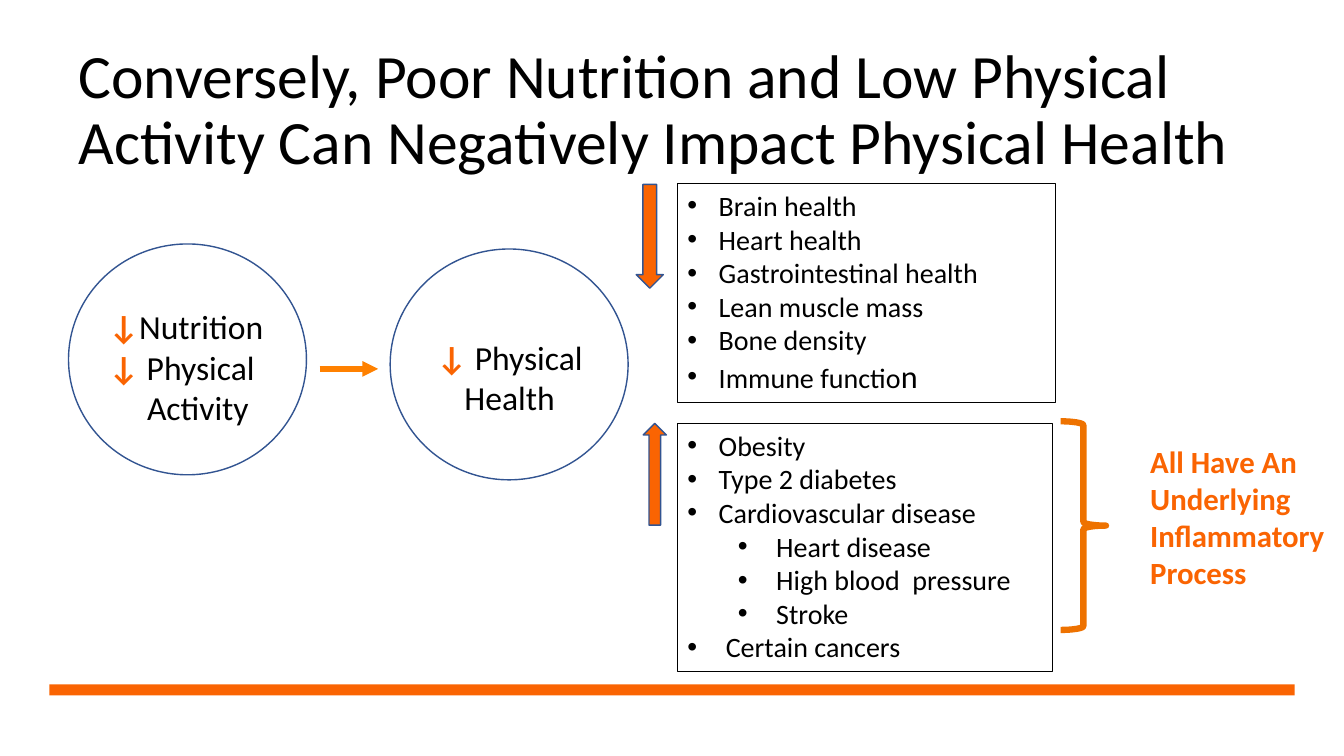
import pptx
import pptx.util
import pptx.dml.color
import pptx.enum.shapes
import pptx.enum.text
import pptx.oxml
import pptx.oxml.ns
from pptx.util import Inches

SHAPE = pptx.enum.shapes.MSO_SHAPE
ALIGN = pptx.enum.text.PP_ALIGN
ANCHOR = pptx.enum.text.MSO_ANCHOR
FIT = pptx.enum.text.MSO_AUTO_SIZE
FONT = "Calibri"
ORANGE, BLUE, BLACK = "FA6402", "325491", "000000"


def color(code):
    return pptx.dml.color.RGBColor.from_string(code)


def style(font, size, code=BLACK, bold=False):
    font.name = FONT
    font.size = pptx.util.Pt(size)
    font.bold = bold
    font.color.rgb = color(code)


def add_xml(parent, tag, **attrs):
    node = pptx.oxml.ns.qn(tag)
    child = parent.makeelement(node, attrs)
    parent.append(child)
    return child


def add_form(slide, kind, box, fill=None, line=None, width=1):
    form = slide.shapes.add_shape(kind, *map(Inches, box))
    form.shadow.inherit = False
    if fill:
        form.fill.solid()
        form.fill.fore_color.rgb = color(fill)
    else:
        form.fill.background()
    if line:
        form.line.color.rgb = color(line)
        form.line.width = pptx.util.Pt(width)
    else:
        form.line.fill.background()
    return form


def add_text(slide, box, lines, size, align=ALIGN.LEFT):
    """Each line is a list of (text, colour, bold) runs."""
    frame = slide.shapes.add_textbox(*map(Inches, box)).text_frame
    frame.word_wrap = True
    for i, runs in enumerate(lines):
        para = frame.paragraphs[0] if i == 0 else frame.add_paragraph()
        para.alignment = align
        for text, code, bold in runs:
            run = para.add_run()
            run.text = text
            style(run.font, size, code, bold)
    return frame


def indent(para, left, hang=0.0):
    props = para._p.get_or_add_pPr()
    props.set("marL", str(Inches(left)))
    props.set("indent", str(-Inches(hang)))
    return props


def add_list(slide, box, items):
    """Each item is (text, level, left indent, hanging indent)."""
    frame = add_form(slide, SHAPE.RECTANGLE, box, line=BLACK, width=0.75).text_frame
    frame.word_wrap = True
    frame.vertical_anchor = ANCHOR.TOP
    for i, (text, level, left, hang) in enumerate(items):
        para = frame.paragraphs[0] if i == 0 else frame.add_paragraph()
        para.text = text
        para.level = level
        para.alignment = ALIGN.LEFT
        props = indent(para, left, hang)
        add_xml(props, "a:buFont", typeface="Arial")
        add_xml(props, "a:buChar", char="•")
        style(para.font, 20)
    return frame


def add_arrow(slide, start, end, code, width):
    arrow = slide.shapes.add_connector(
        pptx.enum.shapes.MSO_CONNECTOR.STRAIGHT, *map(Inches, start + end))
    arrow.line.color.rgb = color(code)
    arrow.line.width = pptx.util.Pt(width)
    add_xml(arrow.line._get_or_add_ln(), "a:tailEnd", type="triangle")
    add_xml(arrow._element.spPr, "a:effectLst")


def set_title(slide, box, text):
    title = slide.shapes.title
    title.left, title.top, title.width, title.height = map(Inches, box)
    frame = title.text_frame
    frame.text = text
    frame.word_wrap = True
    frame.auto_size = FIT.NONE
    frame.vertical_anchor = ANCHOR.MIDDLE
    para = frame.paragraphs[0]
    para.alignment = ALIGN.LEFT
    para.line_spacing = 0.9
    style(para.font, 44)


def main():
    deck = pptx.Presentation()
    deck.slide_width, deck.slide_height = Inches(13.33), Inches(7.5)
    slide = deck.slides.add_slide(deck.slide_layouts[5])
    set_title(slide, (0.68, 0.38, 12.13, 1.45),
              "Conversely, Poor Nutrition and Low Physical Activity "
              "Can Negatively Impact Physical Health")
    add_form(slide, SHAPE.RECTANGLE, (0.49, 6.79, 12.35, 0.11), ORANGE)

    for left, top in ((0.68, 2.42), (3.87, 2.47)):
        add_form(slide, SHAPE.OVAL, (left, top, 2.36, 2.29), line=BLUE)
    down = ("↓", ORANGE, True)
    causes = add_text(slide, (0.98, 2.99, 2.29, 1.32), [
        [down, ("Nutrition", BLACK, False)],
        [down, (" Physical", BLACK, False)],
        [("Activity", BLACK, False)]], 24)
    indent(causes.paragraphs[2], 0.38)
    add_text(slide, (4.16, 3.29, 1.79, 0.91),
             [[("↓ ", ORANGE, True), ("Physical Health", BLACK, False)]],
             24, ALIGN.CENTER)
    add_arrow(slide, (3.17, 3.66), (3.75, 3.66), "FF8100", 3.75)

    main_item, sub_item = (0, 0.31, 0.31), (1, 0.88, 0.38)
    losses = ("Brain health", "Heart health", "Gastrointestinal health",
              "Lean muscle mass", "Bone density", "Immune functio")
    frame = add_list(slide, (6.72, 1.82, 3.75, 2.17),
                     [(text, *main_item) for text in losses])
    last = frame.paragraphs[-1].add_run()
    last.text = "n"
    last.font.size = pptx.util.Pt(23)
    add_list(slide, (6.72, 4.2, 3.72, 2.46), [
        ("Obesity", *main_item),
        ("Type 2 diabetes", *main_item),
        ("Cardiovascular disease", *main_item),
        ("Heart disease", *sub_item),
        ("High blood  pressure", *sub_item),
        ("Stroke", *sub_item),
        ("Certain cancers", 0, 0.38, 0.38)])
    add_form(slide, SHAPE.DOWN_ARROW, (6.31, 1.83, 0.27, 1.03), ORANGE, BLUE)
    add_form(slide, SHAPE.UP_ARROW, (6.38, 4.2, 0.23, 1.01), ORANGE, BLUE)

    add_form(slide, SHAPE.RIGHT_BRACE, (10.52, 4.18, 0.45, 2.07),
             line="EE7200", width=4.5)
    add_text(slide, (11.31, 4.34, 2.03, 1.58),
             [[("All Have An Underlying Inflammatory Process", ORANGE, True)]], 22)
    deck.save("out.pptx")


if __name__ == "__main__":
    main()
